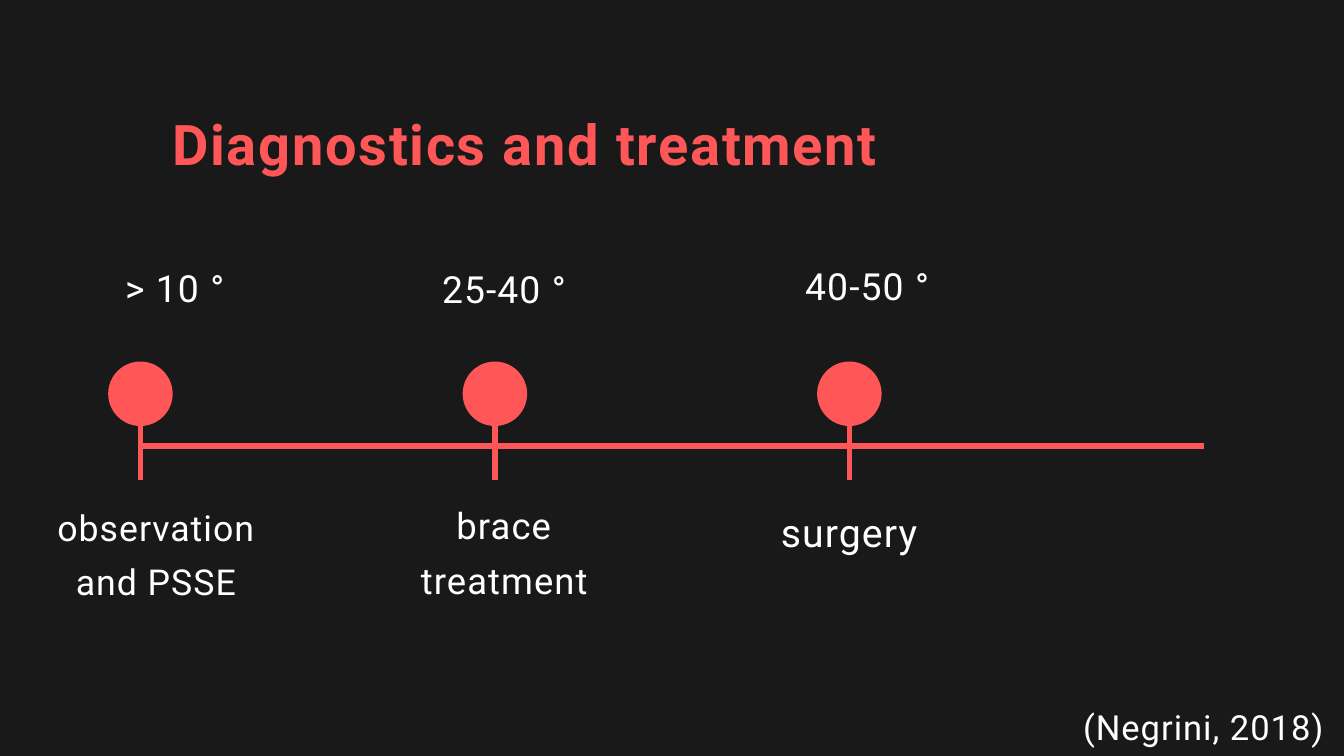
from pptx import Presentation
from pptx.dml.color import RGBColor
from pptx.enum.shapes import MSO_CONNECTOR as Link, MSO_SHAPE as Kind
from pptx.enum.text import PP_ALIGN as Align
from pptx.oxml.ns import qn
from pptx.util import Inches, Pt
from lxml.etree import SubElement

WIDE, HIGH = 20, 11.25
DARK, CORAL, WHITE = "191919", "FF5757", "FFFFFF"

# lines, (left, top, width, height), size, line pitch, letter spacing
TITLE = (["Diagnostics and treatment"], (1.12, 1.55, 13.39, 1.05), 60, 78, 1.8)
SOURCE = (["(Negrini, 2018)"], (16.08, 10.35, 3.66, 0.73), 37, 55.5, 1.1)
STAGES = [
    ((["> 10 °"], (1.54, 3.78, 2.12, 0.78), 40, 60, 1.2),
     (["observation", "and PSSE"], (0.12, 7.37, 4.4, 1.54), 38.2, 57.3, 1.1)),
    ((["25-40 °"], (6.44, 3.8, 2.12, 0.78), 40, 60, 1.2),
     (["brace treatment"], (6.08, 7.33, 2.85, 1.58), 39, 58.5, 1.2)),
    ((["40-50 °"], (11.71, 3.75, 2.39, 0.78), 40, 60, 1.2),
     (["surgery"], (11.17, 7.39, 2.93, 0.83), 42, 63, 1.2)),
]

# Timeline: equal steps along one axis
START, STEP, END = 2.09, 5.275, 17.91
AXIS, STEM_TOP, STEM_END = 6.64, 6.23, 7.15
DOT, DOT_TOP = 0.96, 5.38


def tint(code):
    return RGBColor.from_string(code)


def add_text(slide, item, color=WHITE, bold=False):
    lines, box, size, pitch, gap = item
    frame = slide.shapes.add_textbox(*map(Inches, box)).text_frame
    frame.word_wrap = True
    for side in ("left", "top", "right", "bottom"):
        setattr(frame, f"margin_{side}", 0)
    look = {"name": "Roboto", "size": Pt(size), "bold": bold}
    for i, line in enumerate(lines):
        para = frame.add_paragraph() if i else frame.paragraphs[0]
        para.alignment = Align.CENTER
        para.line_spacing = Pt(pitch)
        run = para.add_run()
        run.text = line
        for key, value in look.items():
            setattr(run.font, key, value)
        run.font.color.rgb = tint(color)
        run.font._element.set("spc", str(round(gap * 100)))


def add_line(slide, *ends):
    line = slide.shapes.add_connector(Link.STRAIGHT, *map(Inches, ends))
    line.line.color.rgb = tint(CORAL)
    line.line.width = Pt(6)
    SubElement(line._element.spPr, qn("a:effectLst"))


def add_dot(slide, mid):
    box = (mid - DOT / 2, DOT_TOP, DOT, DOT)
    dot = slide.shapes.add_shape(Kind.OVAL, *map(Inches, box))
    dot.shadow.inherit = False
    dot.fill.solid()
    dot.fill.fore_color.rgb = tint(CORAL)
    dot.line.fill.background()


def main():
    deck = Presentation()
    deck.slide_width, deck.slide_height = Inches(WIDE), Inches(HIGH)
    slide = deck.slides.add_slide(deck.slide_layouts[6])
    slide.background.fill.solid()
    slide.background.fill.fore_color.rgb = tint(DARK)

    add_text(slide, TITLE, CORAL, True)
    add_line(slide, START, AXIS, END, AXIS)
    for i, (angle, care) in enumerate(STAGES):
        mid = START + i * STEP
        add_line(slide, mid, STEM_END, mid, STEM_TOP)
        add_dot(slide, mid)
        add_text(slide, angle)
        add_text(slide, care)
    add_text(slide, SOURCE)
    deck.save("out.pptx")


if __name__ == "__main__":
    main()
